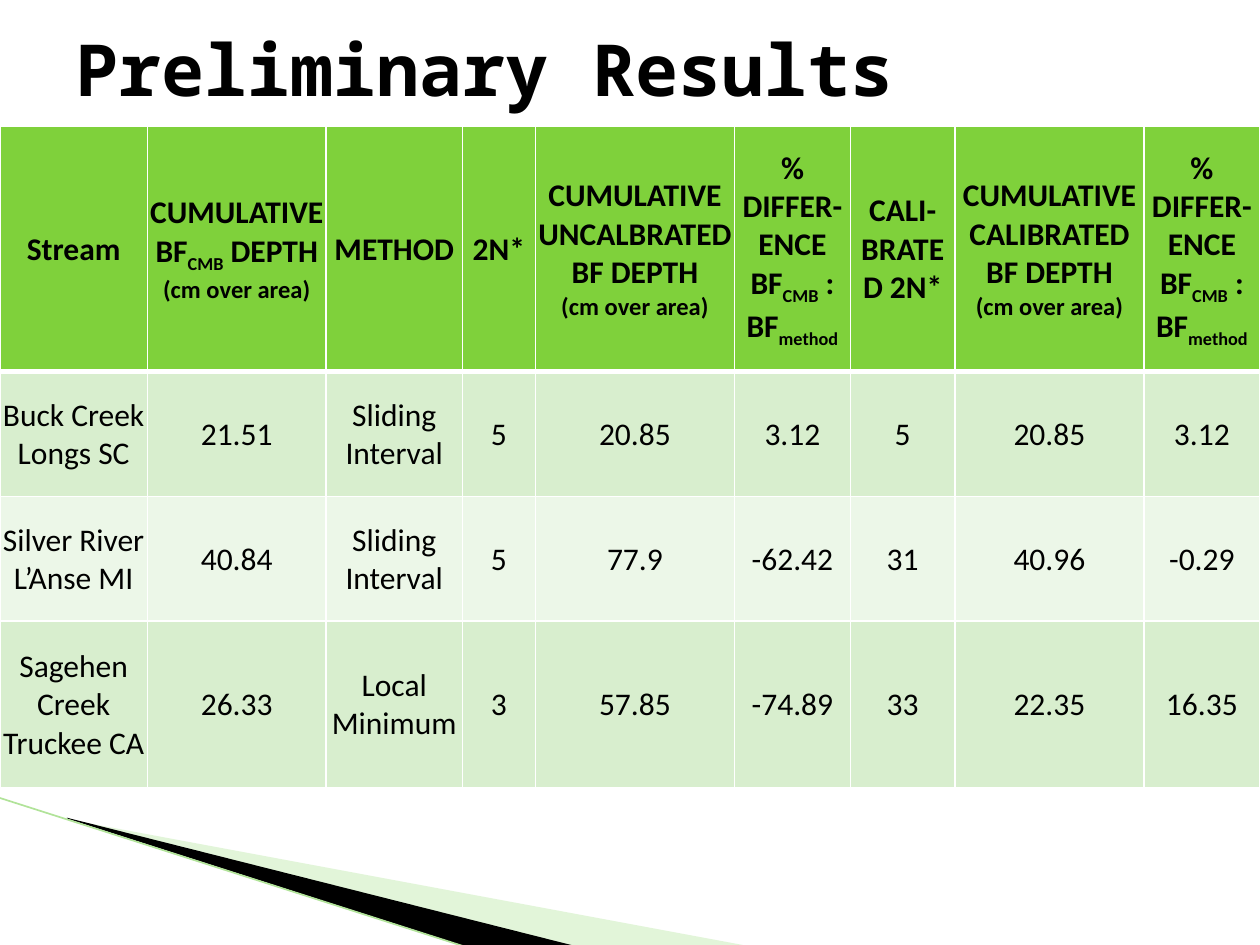
"""Build the slide of preliminary baseflow results."""
from dataclasses import dataclass

from lxml import etree
from pptx import Presentation
from pptx.dml.color import RGBColor
from pptx.enum.shapes import MSO_CONNECTOR
from pptx.enum.text import MSO_ANCHOR, PP_ALIGN
from pptx.oxml.ns import qn
from pptx.slide import Slide
from pptx.table import _Cell
from pptx.text.text import _Paragraph
from pptx.util import Pt

MIDDLE = MSO_ANCHOR.MIDDLE
LEFT, CENTER = PP_ALIGN.LEFT, PP_ALIGN.CENTER
STRAIGHT = MSO_CONNECTOR.STRAIGHT

COLORS = {
    "text": "000000",
    "header": "7FD13B",
    "odd_row": "D8EECE",
    "even_row": "ECF7E8",
    "border": "FFFFFF",
    "pale_wedge": "B8E7A1",
    "dark_wedge": "000000",
    "edge": "B1E399",
}
COLUMN_WIDTHS = (84.2, 102.2, 77.8, 41.8, 113.8, 66.2, 59.8, 108, 66.2)
ROW_HEIGHTS = (140.4, 71.3, 71.3, 95)


@dataclass(frozen=True)
class Span:
    """A stretch of text with one format."""
    text: str
    size: float = 18
    subscript: bool = False
    new_line: bool = False


@dataclass(frozen=True)
class Wedge:
    """A filled corner decoration."""
    points: tuple[tuple[float, float], ...]
    color: str
    opacity: int = 100


CMB = Span("CMB", subscript=True)
UNIT = "(cm over area)"
UNIT_LINE = Span(UNIT, 14, new_line=True)
DIFFERENCE = (Span("% DIFFER-ENCE BF"), CMB, Span(" : BF"), Span("method", subscript=True))
HEADERS = (
    (Span("Stream"),),
    (Span("CUMULATIVE BF"), CMB, Span(" DEPTH "), Span(UNIT, 14)),
    (Span("METHOD"),),
    (Span("2N*"),),
    (Span("CUMULATIVE UNCALBRATED BF DEPTH"), UNIT_LINE),
    DIFFERENCE,
    (Span("CALI-BRATED 2N*"),),
    (Span("CUMULATIVE CALIBRATED BF DEPTH"), UNIT_LINE),
    DIFFERENCE,
)
STREAMS = (
    ("Buck Creek Longs SC", "21.51", "Sliding Interval", "5", "20.85", "3.12", "5", "20.85", "3.12"),
    ("Silver River L’Anse MI", "40.84", "Sliding Interval", "5", "77.9", "-62.42", "31", "40.96", "-0.29"),
    ("Sagehen Creek Truckee CA", "26.33", "Local Minimum", "3", "57.85", "-74.89", "33", "22.35", "16.35"),
)
WEDGES = (
    Wedge(((39.6, 468.4), (428.4, 540.7), (328.3, 540.7), (39.6, 468)), "pale_wedge", 40),
    Wedge(((38.2, 467.3), (329, 540.7), (267.8, 541.4), (38.9, 468)), "dark_wedge"),
)


def color(name: str) -> RGBColor:
    """Return a palette colour."""
    return RGBColor.from_string(COLORS[name])


def add_span(paragraph: _Paragraph, span: Span, bold: bool, font_name: str = "Calibri") -> None:
    """Add one formatted run to a paragraph."""
    if span.new_line:
        paragraph.add_line_break()
    run = paragraph.add_run()
    run.text = span.text
    run.font.name = font_name
    run.font.size = Pt(span.size)
    run.font.bold = bold
    run.font.color.rgb = color("text")
    if span.subscript:
        run._r.get_or_add_rPr().set("baseline", "-25000")


def add_border(cell: _Cell, side: str, width: float) -> None:
    """Draw one side of a cell."""
    line = etree.SubElement(cell._tc.get_or_add_tcPr(), qn(f"a:ln{side}"), w=str(Pt(width)))
    fill = etree.SubElement(line, qn("a:solidFill"))
    etree.SubElement(fill, qn("a:srgbClr"), val=COLORS["border"])


def fill_cell(cell: _Cell, spans: tuple[Span, ...], row: int) -> None:
    """Write and format one table cell."""
    is_header = row == 0
    cell.margin_left = cell.margin_right = cell.margin_top = Pt(0.7)
    cell.margin_bottom = 0
    cell.vertical_anchor = MIDDLE
    widths = {"L": 1, "R": 1, "T": 3 if row == 1 else 1, "B": 3 if is_header else 1}
    for side, width in widths.items():
        add_border(cell, side, width)
    cell.fill.solid()
    cell.fill.fore_color.rgb = color("header" if is_header else "odd_row" if row % 2 else "even_row")
    paragraph = cell.text_frame.paragraphs[0]
    paragraph.alignment = CENTER
    for span in spans:
        add_span(paragraph, span, is_header)


def add_results(slide: Slide) -> None:
    """Add the table of results."""
    rows = (HEADERS, *(tuple((Span(value),) for value in stream) for stream in STREAMS))
    results = slide.shapes.add_table(
        len(rows), len(HEADERS), 0, Pt(72), Pt(sum(COLUMN_WIDTHS)), Pt(sum(ROW_HEIGHTS))
    ).table
    for column, width in zip(results.columns, COLUMN_WIDTHS):
        column.width = Pt(width)
    for row, height in enumerate(ROW_HEIGHTS):
        results.rows[row].height = Pt(height)
        for column, spans in enumerate(rows[row]):
            fill_cell(results.cell(row, column), spans, row)


def add_wedge(slide: Slide, wedge: Wedge) -> None:
    """Add one corner wedge."""
    start, *others = [(Pt(x), Pt(y)) for x, y in wedge.points]
    outline = slide.shapes.build_freeform(*start, scale=1.0)
    outline.add_line_segments(others, close=True)
    shape = outline.convert_to_shape()
    shape.shadow.inherit = False
    shape.line.fill.background()
    shape.fill.solid()
    shape.fill.fore_color.rgb = color(wedge.color)
    if wedge.opacity < 100:
        tint = shape._element.spPr.find(f"{qn('a:solidFill')}/{qn('a:srgbClr')}")
        etree.SubElement(tint, qn("a:alpha"), val=str(wedge.opacity * 1000))


def add_edge(slide: Slide) -> None:
    """Add the thin line along the corner wedges."""
    edge = slide.shapes.add_connector(STRAIGHT, Pt(-0.7), Pt(455.8), Pt(267.1), Pt(541.4))
    edge.line.color.rgb = color("edge")
    edge.line.width = Pt(0.95)
    etree.SubElement(edge._element.spPr, qn("a:effectLst"))


def add_title(slide: Slide) -> None:
    """Place and write the slide title."""
    title = slide.shapes.title
    title.left, title.top, title.width, title.height = Pt(36), Pt(0), Pt(648), Pt(77.8)
    title.text_frame.vertical_anchor = MIDDLE
    paragraph = title.text_frame.paragraphs[0]
    paragraph.alignment = LEFT
    add_span(paragraph, Span("Preliminary Results", 41), True, "Noto Sans Mono")


def main() -> None:
    """Build and save the presentation."""
    presentation = Presentation()
    presentation.slide_width, presentation.slide_height = Pt(720), Pt(540)
    slide = presentation.slides.add_slide(presentation.slide_layouts[5])
    for wedge in WEDGES:
        add_wedge(slide, wedge)
    add_edge(slide)
    add_title(slide)
    add_results(slide)
    presentation.save("out.pptx")


if __name__ == "__main__":
    main()
